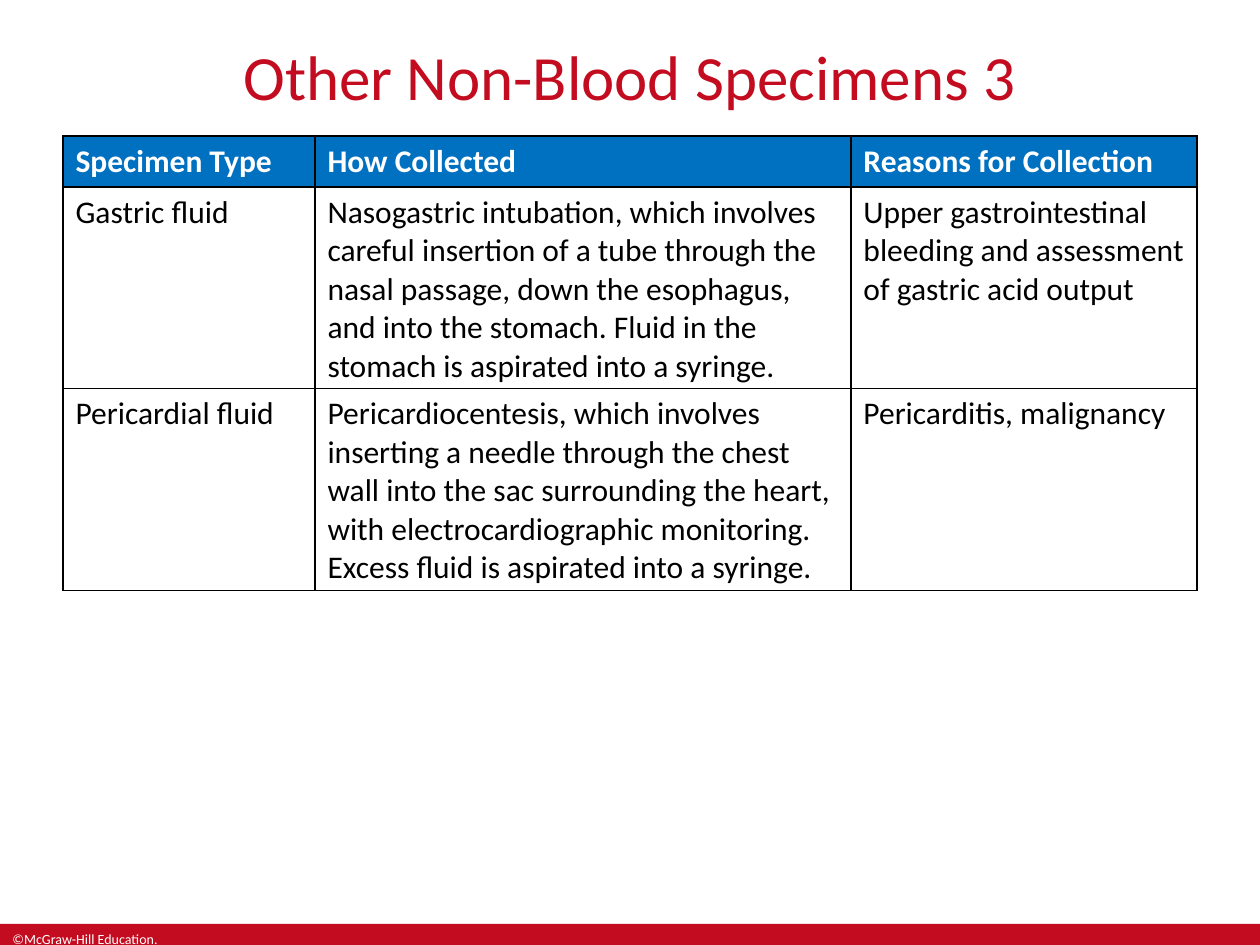
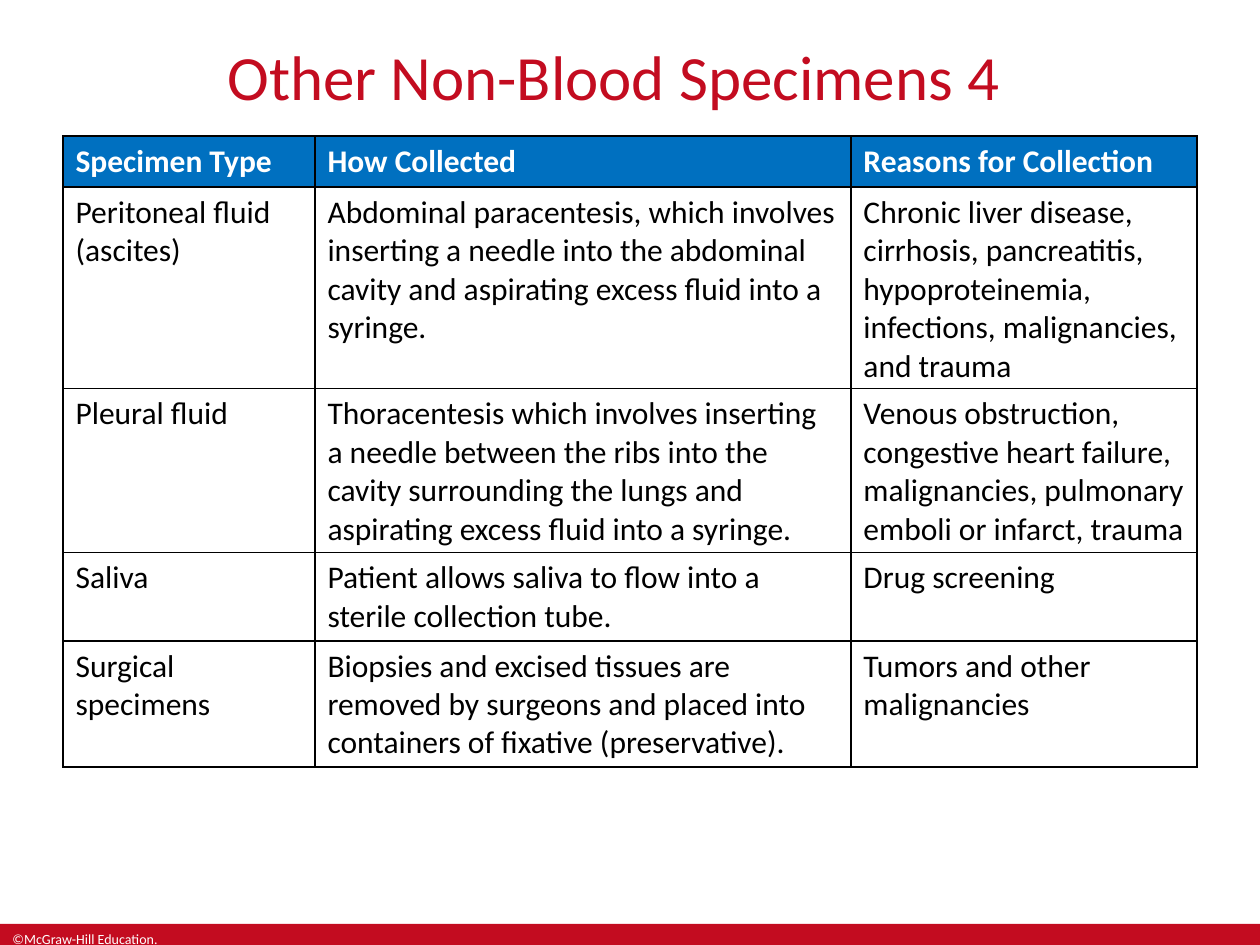
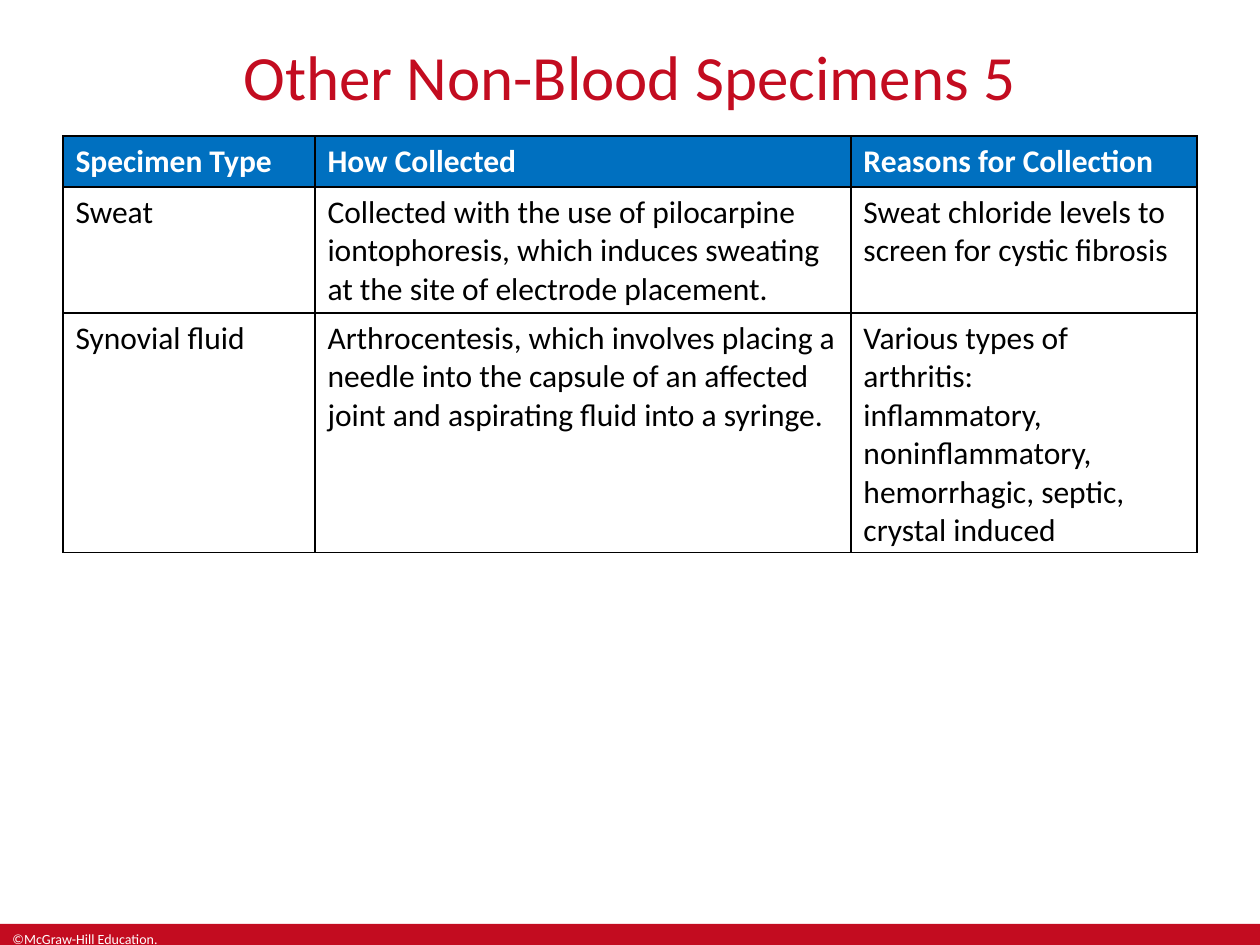
from lxml import etree
from pptx import Presentation
from pptx import util as u
from pptx.dml.color import RGBColor
from pptx.enum import shapes, text
from pptx.oxml.ns import qn

PX = 914400 // 126
RED = RGBColor(0xC3, 0x0C, 0x20)
BLUE = RGBColor(0x00, 0x70, 0xC0)
BLACK = RGBColor(0, 0, 0)
WHITE = RGBColor(255, 255, 255)
FONT = "Calibri"

PAGE = (1260, 945)
TITLE = (0, 31, 1260, 84)
BAND = (0, 924, 1260, 21)
CREDIT_W = 189
GRID = (63, 136)
COLS = (252, 536, 346)
ROW_H = 51
HEAD = ("Specimen Type", "How Collected", "Reasons for Collection")

# Title, right inset of the title in px, table rows
SLIDES = [
    ("Other Non-Blood Specimens 3", 13, [
        ("Gastric fluid",
         "Nasogastric intubation, which involves careful insertion of a tube "
         "through the nasal passage, down the esophagus, and into the stomach. "
         "Fluid in the stomach is aspirated into a syringe.",
         "Upper gastrointestinal bleeding and assessment of gastric acid output"),
        ("Pericardial fluid",
         "Pericardiocentesis, which involves inserting a needle through the "
         "chest wall into the sac surrounding the heart, with "
         "electrocardiographic monitoring. Excess fluid is aspirated into a "
         "syringe.",
         "Pericarditis, malignancy"),
    ]),
    ("Other Non-Blood Specimens 4", 45, [
        ("Peritoneal fluid (ascites)",
         "Abdominal paracentesis, which involves inserting a needle into the "
         "abdominal cavity and aspirating excess fluid into a syringe.",
         "Chronic liver disease, cirrhosis, pancreatitis, hypoproteinemia, "
         "infections, malignancies, and trauma"),
        ("Pleural fluid",
         "Thoracentesis which involves inserting a needle between the ribs "
         "into the cavity surrounding the lungs and aspirating excess fluid "
         "into a syringe.",
         "Venous obstruction, congestive heart failure, malignancies, "
         "pulmonary emboli or infarct, trauma"),
        ("Saliva",
         "Patient allows saliva to flow into a sterile collection tube.",
         "Drug screening"),
        ("Surgical specimens",
         "Biopsies and excised tissues are removed by surgeons and placed "
         "into containers of fixative (preservative).",
         "Tumors and other malignancies"),
    ]),
    ("Other Non-Blood Specimens 5", 13, [
        ("Sweat",
         "Collected with the use of pilocarpine iontophoresis, which induces "
         "sweating at the site of electrode placement.",
         "Sweat chloride levels to screen for cystic fibrosis"),
        ("Synovial fluid",
         "Arthrocentesis, which involves placing a needle into the capsule of "
         "an affected joint and aspirating fluid into a syringe.",
         "Various types of arthritis:\ninﬂammatory, noninﬂammatory, "
         "hemorrhagic, septic, crystal induced"),
    ]),
]


def emu(*nums):
    return [n * PX for n in nums]


def style(frame, size, color, bold=False):
    for para in frame.paragraphs:
        font = para.font
        font.name, font.size, font.bold = FONT, u.Pt(size), bold
        font.color.rgb = color


def add_text(slide, box, words, size, color):
    frame = slide.shapes.add_textbox(*emu(*box)).text_frame
    frame.word_wrap = True
    frame.vertical_anchor = text.MSO_ANCHOR.TOP
    frame.text = words
    style(frame, size, color)
    return frame


def add_band(slide, box):
    band = slide.shapes.add_shape(shapes.MSO_SHAPE.RECTANGLE, *emu(*box))
    band.shadow.inherit = False
    band.fill.solid()
    band.fill.fore_color.rgb = RED
    band.line.fill.background()
    left, top, _, high = box
    add_text(slide, (left, top, CREDIT_W, high), "©McGraw-Hill Education.", 8, WHITE)


def add_title(slide, box, words, inset):
    frame = add_text(slide, box, words, 36, RED)
    frame.margin_right = inset * PX
    frame.paragraphs[0].alignment = text.PP_ALIGN.CENTER


def add_edges(cell):
    """Draw a thin black line on each side; must run before the cell is filled."""
    props = cell._tc.get_or_add_tcPr()
    for side in ("lnL", "lnR", "lnT", "lnB"):
        line = etree.SubElement(props, qn("a:" + side), w=str(u.Pt(1)))
        fill = etree.SubElement(line, qn("a:solidFill"))
        etree.SubElement(fill, qn("a:srgbClr"), val=str(BLACK))


def add_grid(slide, spot, rows):
    rows = [HEAD, *rows]
    size = (sum(COLS), ROW_H * len(rows))
    table = slide.shapes.add_table(len(rows), len(COLS), *emu(*spot, *size)).table
    table.horz_banding = False
    for col, wide in zip(table.columns, COLS):
        col.width = wide * PX
    for r, row in enumerate(rows):
        for c, words in enumerate(row):
            cell = table.cell(r, c)
            add_edges(cell)
            cell.text = words
            if r == 0:
                cell.fill.solid()
                cell.fill.fore_color.rgb = BLUE
            else:
                cell.fill.background()
            style(cell.text_frame, 18, BLACK if r else WHITE, r == 0)


def main():
    deck = Presentation()
    deck.slide_width, deck.slide_height = emu(*PAGE)
    for title, inset, rows in SLIDES:
        slide = deck.slides.add_slide(deck.slide_layouts[6])
        add_band(slide, BAND)
        add_title(slide, TITLE, title, inset)
        add_grid(slide, GRID, rows)
    deck.save("out.pptx")


if __name__ == "__main__":
    main()
